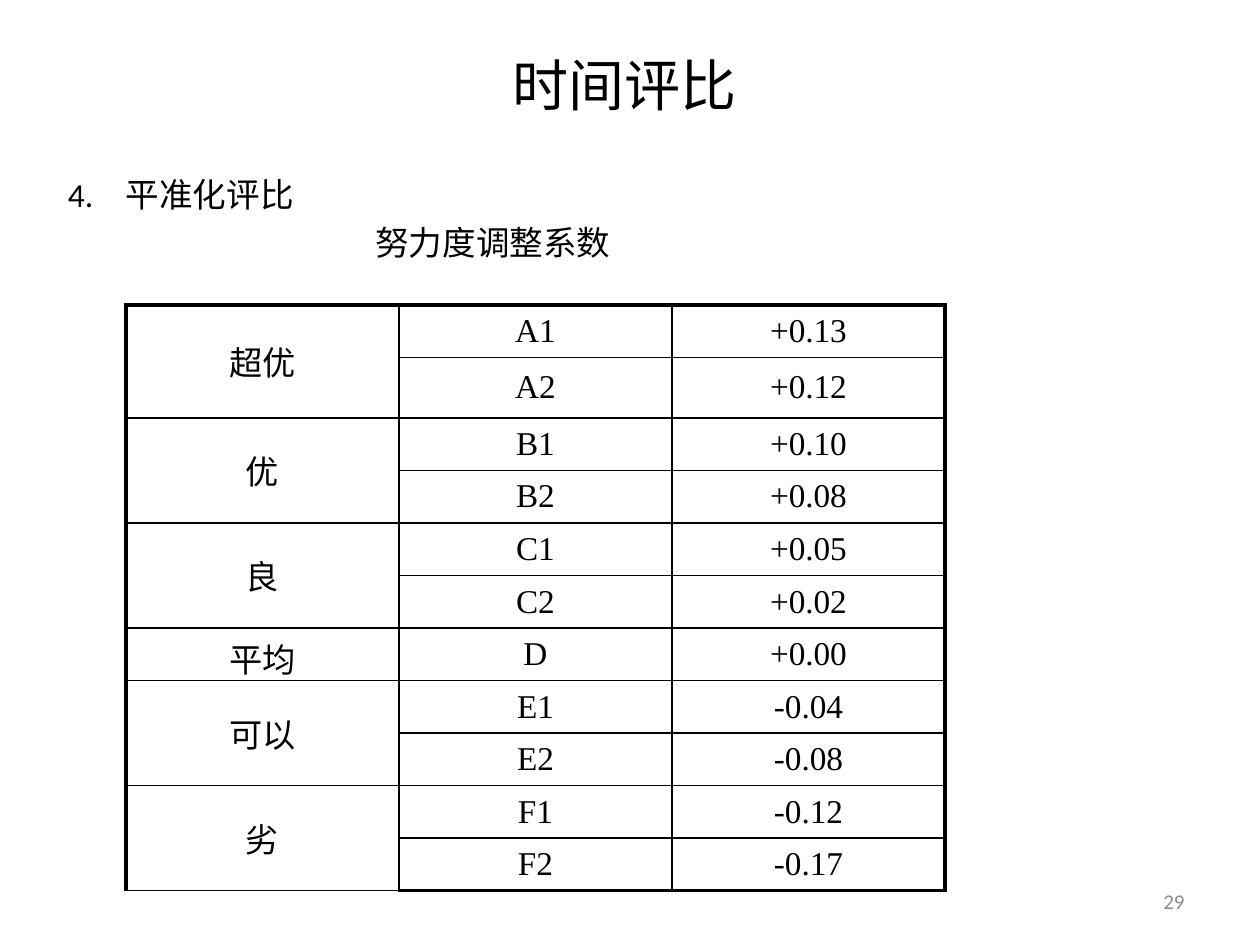
from pptx import Presentation
from pptx.dml.color import RGBColor
from pptx.enum.text import MSO_ANCHOR as Anchor, PP_ALIGN as Align
from pptx.oxml.ns import qn
from pptx.util import Inches, Pt
from lxml.etree import SubElement

BLACK = RGBColor(0x00, 0x00, 0x00)
GREY = RGBColor(0x8C, 0x8C, 0x8C)
OUTER, INNER = Pt(2.25), Pt(1)


def write(paragraph, words, size, color=BLACK, font="Calibri", align=Align.LEFT):
    paragraph.alignment = align
    run = paragraph.add_run()
    run.text = words
    run.font.size, run.font.name = Pt(size), font
    run.font.color.rgb = color


def add_border(cell, side, width):
    line = SubElement(cell._tc.get_or_add_tcPr(), qn(f"a:ln{side}"), w=str(width))
    SubElement(SubElement(line, qn("a:solidFill")), qn("a:srgbClr"), val=str(BLACK))


deck = Presentation()
deck.slide_width, deck.slide_height = Inches(10), Inches(7.5)
slide = deck.slides.add_slide(deck.slide_layouts[5])

# Title
title = slide.shapes.title
title.left, title.top, title.width, title.height = map(Inches, (0.58, 0.17, 8.75, 1))
title.text_frame.vertical_anchor = Anchor.MIDDLE
write(title.text_frame.paragraphs[0], "时间评比", 32, align=Align.CENTER)

# Numbered heading and table caption, placed by indents
body = slide.shapes.add_textbox(*map(Inches, (0.08, 1.33, 9.25, 6.17))).text_frame
body.word_wrap = True
heading, caption = body.paragraphs[0], body.add_paragraph()
for paragraph, words, margin, indent in (
    (heading, "4.\t平准化评比", 0.82, -0.46),
    (caption, "努力度调整系数", 2.8, 0),
):
    write(paragraph, words, 19.2)
    properties = paragraph._p.get_or_add_pPr()
    properties.set("marL", str(Inches(margin)))
    properties.set("indent", str(Inches(indent)))
caption.space_before = Pt(4.5)

# Effort coefficients, grouped by grade
grades = [
    ("超优", [("A1", "+0.13"), ("A2", "+0.12")]),
    ("优", [("B1", "+0.10"), ("B2", "+0.08")]),
    ("良", [("C1", "+0.05"), ("C2", "+0.02")]),
    ("平均", [("D", "+0.00")]),
    ("可以", [("E1", "-0.04"), ("E2", "-0.08")]),
    ("劣", [("F1", "-0.12"), ("F2", "-0.17")]),
]
rows = [
    (grade if step == 0 else "", code, factor)
    for grade, steps in grades
    for step, (code, factor) in enumerate(steps)
]
last_row, last_column = len(rows) - 1, 2
table = slide.shapes.add_table(
    len(rows), 3, Inches(1), Inches(2.42), Inches(6.5), Inches(4.59)
).table
table.first_row = table.horz_banding = False
table.rows[1].height = Inches(0.48)

for r, row in enumerate(rows):
    for c, words in enumerate(row):
        cell = table.cell(r, c)
        for side, at_edge in (
            ("L", c == 0),
            ("R", c == last_column),
            ("T", r == 0),
            ("B", r == last_row),
        ):
            add_border(cell, side, OUTER if at_edge else INNER)
        cell.fill.background()
        cell.vertical_anchor = Anchor.MIDDLE
        if words:
            write(cell.text_frame.paragraphs[0], words, 19,
                  font="Times New Roman", align=Align.CENTER)

# Merge each grade over its steps
first = 0
for grade, steps in grades:
    if len(steps) > 1:
        table.cell(first, 0).merge(table.cell(first + len(steps) - 1, 0))
    first += len(steps)

# Slide number
number = slide.shapes.add_textbox(*map(Inches, (7.17, 6.95, 2.33, 0.4))).text_frame
number.word_wrap = True
number.vertical_anchor = Anchor.MIDDLE
write(number.paragraphs[0], "29", 12, GREY, align=Align.RIGHT)

deck.save("out.pptx")
